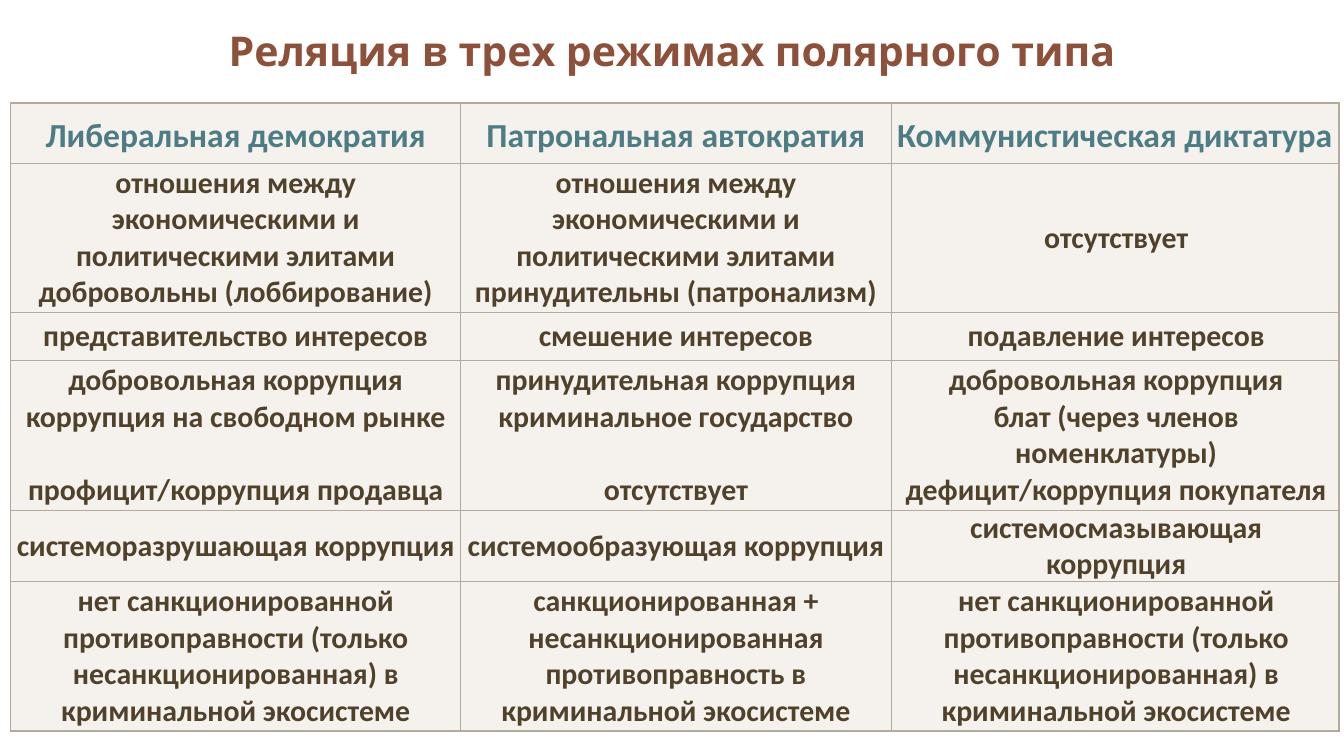
from dataclasses import dataclass

from lxml import etree
from pptx import Presentation
from pptx import util as u
from pptx.dml import color
from pptx.enum import text
from pptx.oxml import ns


@dataclass(frozen=True)
class Theme:
    title: str = "8D503B"
    header: str = "4D7C85"
    body: str = "50412B"
    cell: str = "EFEAE4"
    cell_alpha: int = 60000
    border: str = "B3A99D"
    title_font: str = "Open Sans"
    table_font: str = "Calibri"
    title_size: int = 22
    header_size: int = 18
    body_size: int = 16
    outer_line: float = 1
    inner_line: float = 0.5


theme = Theme()


def write(paragraph, content, *, font, size, rgb, spacing=1.0, before=0, left=0):
    paragraph.alignment = text.PP_ALIGN.CENTER
    paragraph.line_spacing = spacing
    if before:
        paragraph.space_before = u.Pt(before)
    if left:
        paragraph._p.get_or_add_pPr().set("marL", str(left))
    run = paragraph.add_run()
    run.text = content
    run.font.name = font
    run.font.size = u.Pt(size)
    run.font.bold = True
    run.font.color.rgb = color.RGBColor.from_string(rgb)


def draw_borders(cell, outer_sides):
    properties = cell._tc.get_or_add_tcPr()
    for position, (side, outer) in enumerate(outer_sides.items()):
        width = theme.outer_line if outer else theme.inner_line
        line = etree.Element(ns.qn(f"a:ln{side}"), w=str(u.Pt(width)))
        fill = etree.SubElement(line, ns.qn("a:solidFill"))
        etree.SubElement(fill, ns.qn("a:srgbClr"), val=theme.border)
        properties.insert(position, line)


deck = Presentation()
deck.slide_width = u.Cm(25.4)
deck.slide_height = u.Cm(14.29)
slide = deck.slides.add_slide(deck.slide_layouts[6])

heading = slide.shapes.add_textbox(u.Cm(0.3), u.Cm(0.18), u.Cm(24.8), u.Cm(1.75)).text_frame
heading.word_wrap = True
heading.vertical_anchor = text.MSO_ANCHOR.MIDDLE
write(heading.paragraphs[0], "Реляция в трех режимах полярного типа",
      font=theme.title_font, size=theme.title_size, rgb=theme.title, spacing=0.75)

unsanctioned = ("нет санкционированной противоправности (только "
                "несанкционированная) в криминальной экосистеме")
regimes = [
    ["Либеральная демократия", "Патрональная автократия", "Коммунистическая диктатура"],
    ["отношения между экономическими и политическими элитами добровольны (лоббирование)",
     "отношения между экономическими и политическими элитами принудительны (патронализм)",
     "отсутствует"],
    ["представительство интересов", "смешение интересов", "подавление интересов"],
    ["добровольная коррупция\nкоррупция на свободном рынке\nпрофицит/коррупция продавца",
     "принудительная коррупция\nкриминальное государство\nотсутствует",
     "добровольная коррупция\nблат (через членов номенклатуры)\nдефицит/коррупция покупателя"],
    ["системоразрушающая коррупция", "системообразующая коррупция",
     "системосмазывающая коррупция"],
    [unsanctioned,
     "санкционированная + несанкционированная противоправность в криминальной экосистеме",
     unsanctioned],
]
column_widths = [8.51, 8.13, 8.46]
row_heights = [1.14, 2.82, 0.91, 2.82, 0.91, 2.82]
last_row, last_column = len(row_heights) - 1, len(column_widths) - 1
skipped_line = 19.5

comparison = slide.shapes.add_table(
    len(row_heights), len(column_widths), u.Cm(0.2), u.Cm(1.95),
    u.Cm(sum(column_widths)), u.Cm(sum(row_heights))).table
comparison.first_row = False
comparison.horz_banding = False
for column, width in zip(comparison.columns, column_widths):
    column.width = u.Cm(width)
for row, height in zip(comparison.rows, row_heights):
    row.height = u.Cm(height)

for r, statements in enumerate(regimes):
    for c, statement in enumerate(statements):
        cell = comparison.cell(r, c)
        cell.vertical_anchor = text.MSO_ANCHOR.MIDDLE
        cell.margin_left = cell.margin_right = u.Cm(0.1)
        cell.margin_top = cell.margin_bottom = 0
        cell.fill.solid()
        cell.fill.fore_color.rgb = color.RGBColor.from_string(theme.cell)
        tint = cell._tc.tcPr.find(".//" + ns.qn("a:srgbClr"))
        etree.SubElement(tint, ns.qn("a:alpha"), val=str(theme.cell_alpha))
        draw_borders(cell, {"L": c == 0, "R": c == last_column,
                            "T": r == 0, "B": r == last_row})

        is_header = r == 0
        for i, line in enumerate(statement.split("\n")):
            paragraph = cell.text_frame.add_paragraph() if i else cell.text_frame.paragraphs[0]
            write(paragraph, line, font=theme.table_font,
                  size=theme.header_size if is_header else theme.body_size,
                  rgb=theme.header if is_header else theme.body,
                  spacing=1.15 if is_header else 1.0,
                  before=skipped_line if i == 2 and c < last_column else 0,
                  left=u.Cm(0.05) if c == last_column and not is_header else 0)

deck.save("out.pptx")
